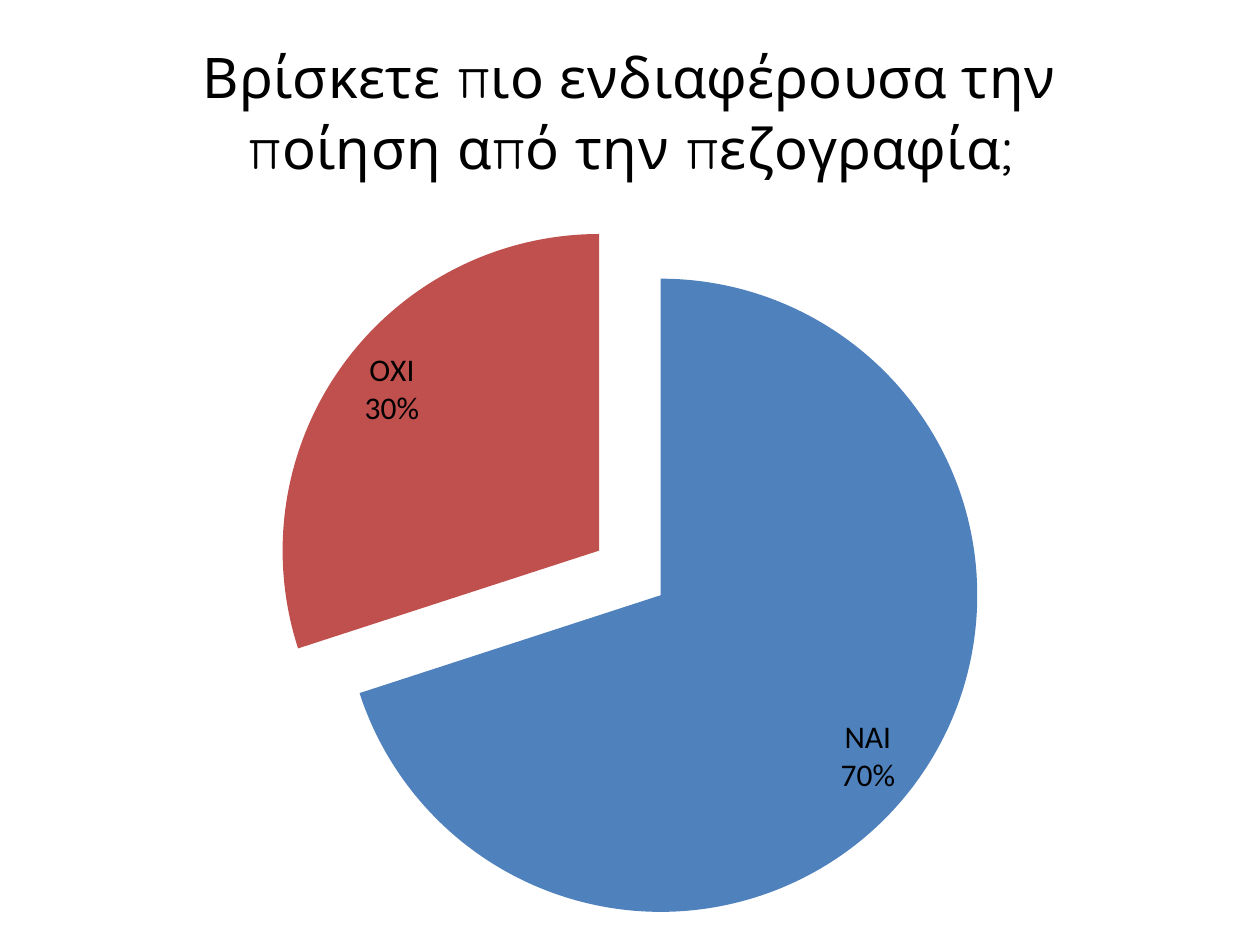
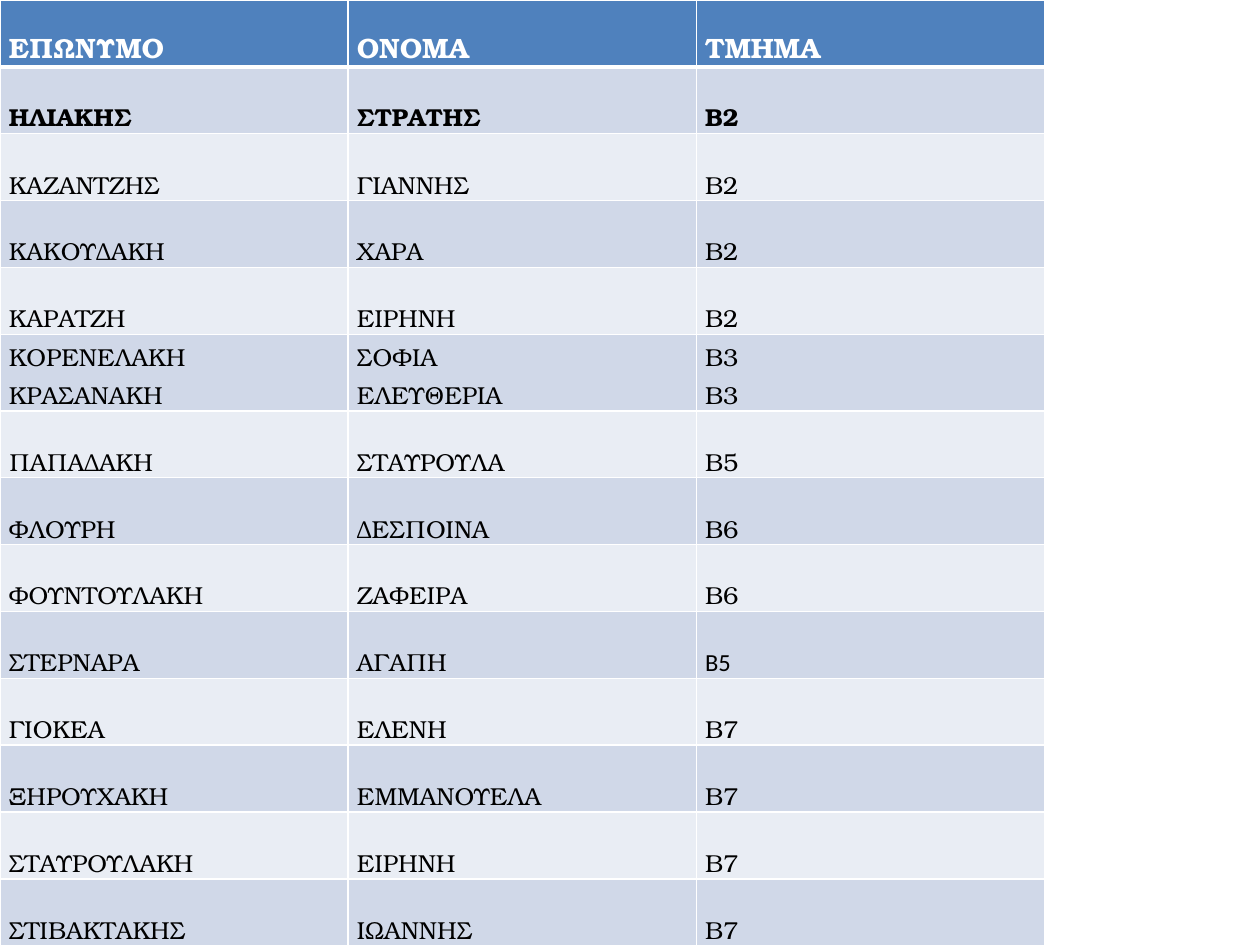
from pptx import Presentation
from pptx.chart.data import CategoryChartData as ChartData
from pptx.dml.color import RGBColor
from pptx.enum.chart import XL_CHART_TYPE as Kind, XL_LABEL_POSITION as Place
from pptx.enum.text import MSO_ANCHOR as Anchor
from pptx.oxml.ns import qn
from pptx.util import Inches, Pt
from lxml.etree import SubElement

# Shared colours and fonts
BLUE = RGBColor(0x4F, 0x81, 0xBD)
RED = RGBColor(0xC0, 0x50, 0x4D)
DARK = RGBColor(0xD0, 0xD8, 0xE8)
LIGHT = RGBColor(0xE9, 0xED, 0xF4)
BLACK = RGBColor(0, 0, 0)
WHITE = RGBColor(0xFF, 0xFF, 0xFF)
SANS, SERIF, TITLE = "Calibri", "TeX Gyre Bonum", "Quicksand"

# Table size; the row with two names is taller, the others share the rest
WIDTH, HEIGHT, TALL = 8.29, 7.5, 0.6

# Poll and class list
ASK = "Βρίσκετε πιο ενδιαφέρουσα την ποίηση από την πεζογραφία;"
VOTES = {"ΝΑΙ": 70, "ΌΧΙ": 30}
PUPILS = [
    ("ΕΠΩΝΥΜΟ", "ΟΝΟΜΑ", "ΤΜΗΜΑ"),
    ("ΗΛΙΑΚΗΣ", "ΣΤΡΑΤΗΣ", "Β2"),
    ("ΚΑΖΑΝΤΖΗΣ", "ΓΙΑΝΝΗΣ", "Β2"),
    ("ΚΑΚΟΥΔΑΚΗ", "ΧΑΡΑ", "Β2"),
    ("ΚΑΡΑΤΖΗ", "ΕΙΡΗΝΗ", "Β2"),
    ("ΚΟΡΕΝΕΛΑΚΗ\nΚΡΑΣΑΝΑΚΗ", "ΣΟΦΙΑ\nΕΛΕΥΘΕΡΙΑ", "Β3\nΒ3"),
    ("ΠΑΠΑΔΑΚΗ", "ΣΤΑΥΡΟΥΛΑ", "Β5"),
    ("ΦΛΟΥΡΗ", "ΔΕΣΠΟΙΝΑ", "Β6"),
    ("ΦΟΥΝΤΟΥΛΑΚΗ", "ΖΑΦΕΙΡΑ", "Β6"),
    ("ΣΤΕΡΝΑΡΑ", "ΑΓΑΠΗ", "Β5"),
    ("ΓΙΟΚΕΑ", "ΕΛΕΝΗ", "Β7"),
    ("ΞΗΡΟΥΧΑΚΗ", "ΕΜΜΑΝΟΥΕΛΑ", "Β7"),
    ("ΣΤΑΥΡΟΥΛΑΚΗ", "ΕΙΡΗΝΗ", "Β7"),
    ("ΣΤΙΒΑΚΤΑΚΗΣ", "ΙΩΑΝΝΗΣ", "Β7"),
]


def style(font, size, name, color=BLACK, bold=False):
    font.size, font.name, font.bold = Pt(size), name, bold
    font.color.rgb = color


def write(frame, text, space=None, **form):
    """Put each line of text in its own formatted paragraph."""
    for i, line in enumerate(text.split("\n")):
        para = frame.add_paragraph() if i else frame.paragraphs[0]
        para.line_spacing = space
        run = para.add_run()
        run.text = line
        style(run.font, **form)


def add_pie(slide, title, votes, colors):
    data = ChartData()
    data.categories = list(votes)
    data.add_series(title, list(votes.values()))
    chart = slide.shapes.add_chart(
        Kind.PIE, 0, 0, Inches(10), Inches(7.5), data).chart
    style(chart.font, 18, SANS)
    chart.has_legend = False
    chart.has_title = True
    write(chart.chart_title.text_frame, title, size=32, name=TITLE)
    chart.chart_title.include_in_layout = False

    # Slices, pulled apart
    plot = chart.plots[0]
    plot.vary_by_categories = True
    series = plot.series[0]
    for i, color in enumerate(colors):
        fill = series.points[i].format.fill
        fill.solid()
        fill.fore_color.rgb = color
    gap = SubElement(series._element, qn("c:explosion"), val="12")
    series._element.find(qn("c:tx")).addnext(gap)

    # Labels
    labels = series.data_labels
    labels.show_category_name = labels.show_percentage = True
    labels.show_value = False
    labels.number_format, labels.number_format_is_linked = "0%", False
    labels.position = Place.BEST_FIT
    style(labels.font, 18, SANS)
    mark = SubElement(labels._element, qn("c:separator"))
    mark.text = "\n"
    labels._element.find(qn("c:showBubbleSize")).addnext(mark)


def set_edges(cell, bottom):
    props = cell._tc.get_or_add_tcPr()
    for side, width in zip("LRTB", (1, 1, 1, bottom)):
        line = SubElement(props, qn(f"a:ln{side}"), w=str(Pt(width)))
        fill = SubElement(line, qn("a:solidFill"))
        SubElement(fill, qn("a:srgbClr"), val=str(WHITE))


def fill_cell(cell, text, row, font):
    head = row == 0
    set_edges(cell, bottom=3 if head else 1)
    cell.fill.solid()
    cell.fill.fore_color.rgb = BLUE if head else DARK if row % 2 else LIGHT
    cell.vertical_anchor = Anchor.BOTTOM
    cell.margin_left = cell.margin_right = Inches(0.07)
    cell.margin_top = Inches(0 if head else 0.01)
    cell.margin_bottom = 0
    write(cell.text_frame, text, space=1.15, size=16 if head else 14,
          name=font, color=WHITE if head else BLACK, bold=row < 2)


def add_list(slide, rows):
    table = slide.shapes.add_table(
        len(rows), 3, 0, 0, Inches(WIDTH), Inches(HEIGHT)).table
    table.first_row = table.horz_banding = False
    for col in table.columns:
        col.width = Inches(WIDTH / 3)
    low = (HEIGHT - TALL) / (len(rows) - 1)
    for r, words in enumerate(rows):
        table.rows[r].height = Inches(TALL if "\n" in words[0] else low)
        for c, text in enumerate(words):
            odd = words[0] == "ΣΤΕΡΝΑΡΑ" and c == 2
            fill_cell(table.cell(r, c), text, r, SANS if odd else SERIF)


def main():
    deck = Presentation()
    deck.slide_width, deck.slide_height = Inches(10), Inches(7.5)
    blank = deck.slide_layouts[6]
    add_pie(deck.slides.add_slide(blank), ASK, VOTES, (BLUE, RED))
    add_list(deck.slides.add_slide(blank), PUPILS)
    deck.save("out.pptx")


if __name__ == "__main__":
    main()
